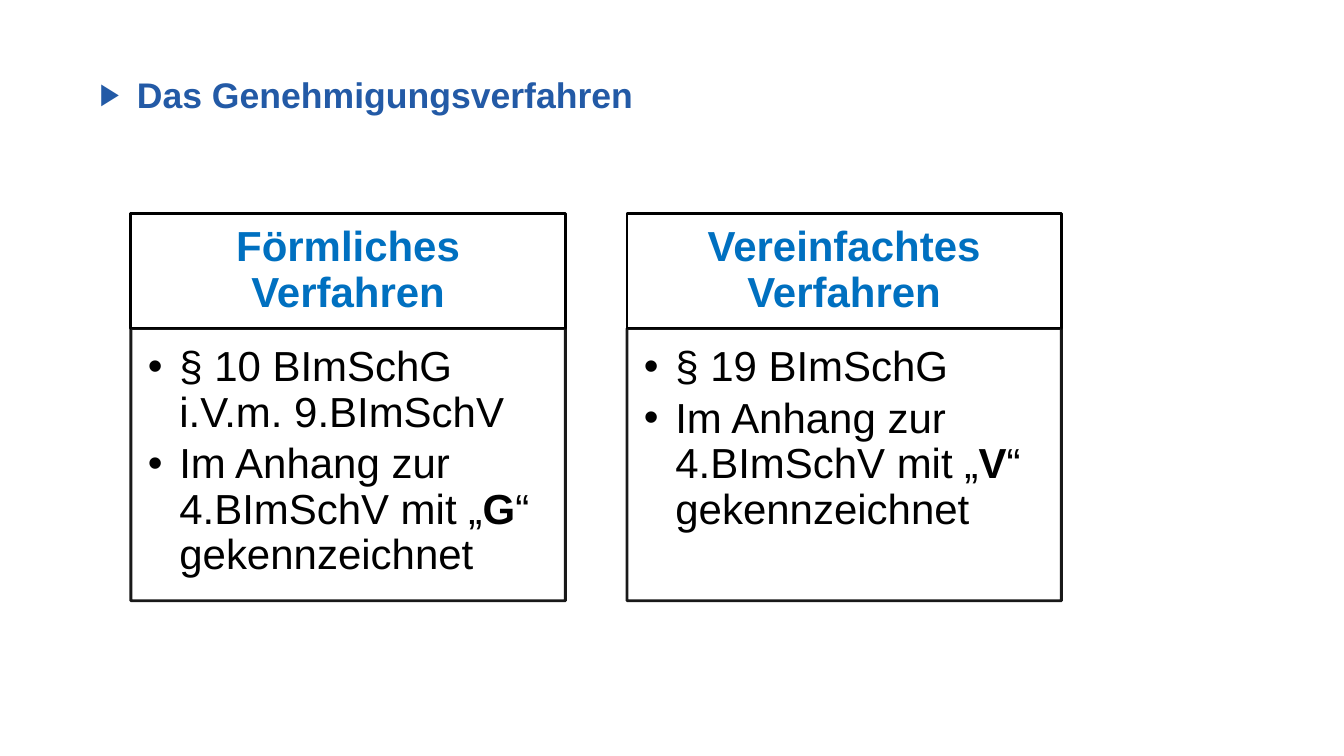
from lxml import etree
from pptx import Presentation
from pptx.dml import color as col
from pptx.enum import shapes, text
from pptx.oxml import ns
from pptx.util import Cm, Pt

HUES = {"title": "235AA6", "head": "0070C0", "ink": "000000", "paper": "FFFFFF"}
FONT = "Arial"
CARDS = [
    ("Förmliches Verfahren", "§ 10 BImSchG i.V.m. 9.BImSchV", "G"),
    ("Vereinfachtes Verfahren", "§ 19 BImSchG", "V"),
]


def rgb(hue):
    return col.RGBColor.from_string(HUES[hue])


def node(root, tag, **attrs):
    return etree.SubElement(root, ns.qn("a:" + tag), attrs)


def bullet(para, char, indent, hue, size=100):
    props = para._p.get_or_add_pPr()
    props.set("marL", str(Cm(indent)))
    props.set("indent", str(-Cm(indent)))
    node(node(props, "buClr"), "srgbClr", val=HUES[hue])
    node(props, "buSzPct", val=str(size * 1000))
    node(props, "buFont", typeface=FONT)
    node(props, "buChar", char=char)


def add_run(para, words, size, hue, bold=False):
    run = para.add_run()
    run.text = words
    font = run.font
    font.name, font.size, font.bold = FONT, Pt(size), bold
    font.color.rgb = rgb(hue)


def set_frame(frame, anchor, insets):
    frame.word_wrap = True
    frame.auto_size = text.MSO_AUTO_SIZE.NONE
    frame.vertical_anchor = anchor
    (frame.margin_left, frame.margin_top,
     frame.margin_right, frame.margin_bottom) = map(Cm, insets)


def add_title(slide, left, top, width, height):
    title = slide.shapes.title
    title.left, title.top = Cm(left), Cm(top)
    title.width, title.height = Cm(width), Cm(height)
    frame = title.text_frame
    set_frame(frame, text.MSO_ANCHOR.TOP, (0, 0, 0, 0))
    para = frame.paragraphs[0]
    para.alignment = text.PP_ALIGN.LEFT
    para.line_spacing = Pt(29)
    bullet(para, "▶", 0.94, "title", 85)
    add_run(para, "Das Genehmigungsverfahren", 25.4, "title", True)


def add_box(slide, left, top, width, height, alpha=100):
    box = slide.shapes.add_shape(
        shapes.MSO_SHAPE.RECTANGLE, Cm(left), Cm(top), Cm(width), Cm(height))
    box.shadow.inherit = False
    box.fill.solid()
    box.fill.fore_color.rgb = rgb("paper")
    box.line.color.rgb = rgb("ink")
    box.line.width = Pt(2)
    if alpha < 100:
        for tint in box._element.spPr.iter(ns.qn("a:srgbClr")):
            node(tint, "alpha", val=str(alpha * 1000))
    return box.text_frame


def add_card(slide, left, top, width, height, head, law, mark):
    split = 2.9
    frame = add_box(slide, left, top, width, split)
    set_frame(frame, text.MSO_ANCHOR.MIDDLE, (0.58, 0.33, 0.58, 0.33))
    para = frame.paragraphs[0]
    para.alignment = text.PP_ALIGN.CENTER
    para.line_spacing = 0.9
    add_run(para, head, 30, "head", True)

    frame = add_box(slide, left, top + split, width, height - split, 90)
    set_frame(frame, text.MSO_ANCHOR.TOP, (0.43, 0.43, 0.58, 0.66))
    items = [
        [(law, False)],
        [("Im Anhang zur 4.BImSchV mit „", False), (mark, True),
         ("“ gekennzeichnet", False)],
    ]
    for i, item in enumerate(items):
        para = frame.add_paragraph() if i else frame.paragraphs[0]
        para.alignment = text.PP_ALIGN.LEFT
        para.line_spacing = 0.9
        para.space_after = Pt(4.5)
        bullet(para, "•", 0.79, "ink")
        for words, bold in item:
            add_run(para, words, 30, "ink", bold)


def main():
    deck = Presentation()
    deck.slide_width, deck.slide_height = Cm(33.87), Cm(19.05)
    slide = deck.slides.add_slide(deck.slide_layouts[5])
    add_title(slide, 2.51, 1.88, 22.33, 1.9)
    for i, card in enumerate(CARDS):
        add_card(slide, 3.3 + i * 12.5, 5.38, 10.95, 9.76, *card)
    deck.save("out.pptx")


if __name__ == "__main__":
    main()
